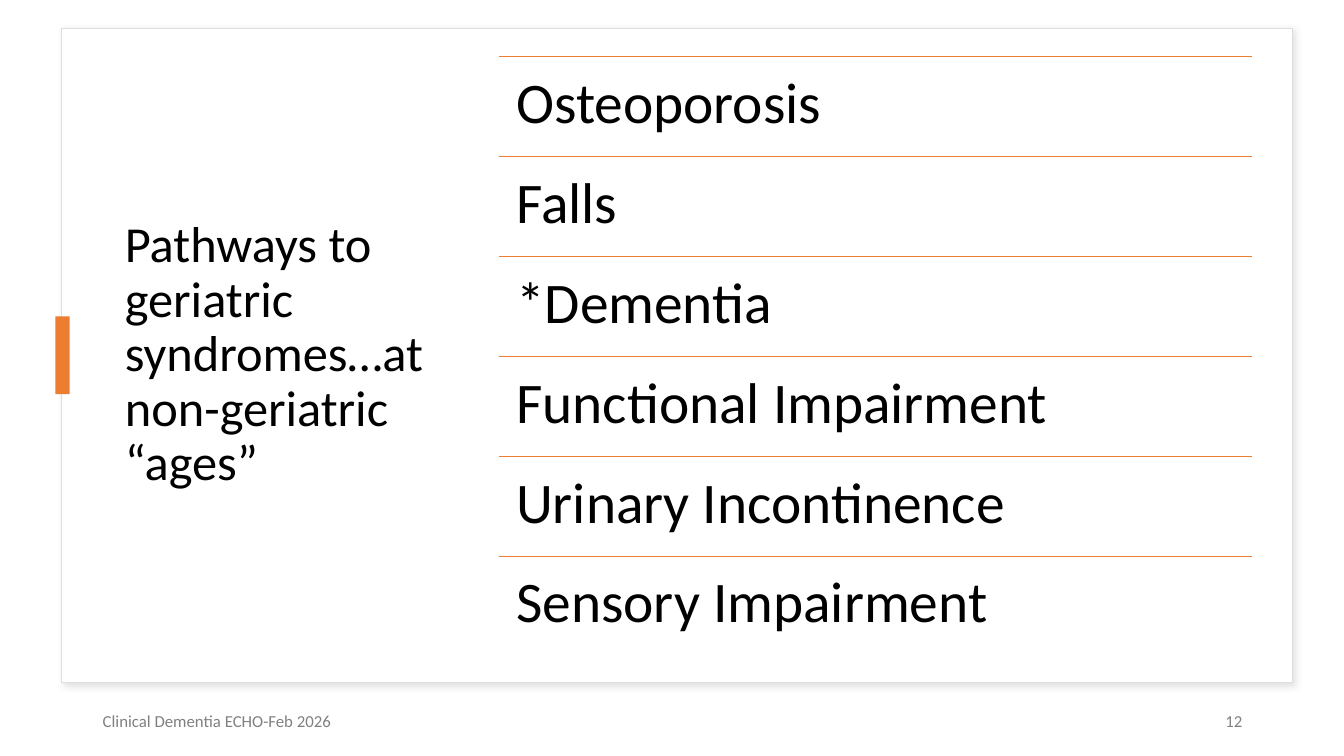
"""Build the slide on pathways to geriatric syndromes."""
from lxml import etree
from pptx import Presentation
from pptx.dml.color import RGBColor
from pptx.enum.shapes import MSO_CONNECTOR, MSO_SHAPE
from pptx.enum.text import MSO_ANCHOR, PP_ALIGN
from pptx.oxml.ns import qn
from pptx.util import Inches, Pt

WHITE = RGBColor(0xFF, 0xFF, 0xFF)
BLACK = RGBColor(0x00, 0x00, 0x00)
GRAY = RGBColor(0x80, 0x80, 0x80)
BORDER = RGBColor(0xDE, 0xDE, 0xDE)
SHADOW = RGBColor(0xC5, 0xC3, 0xC3)
ORANGE = RGBColor(0xED, 0x7D, 0x31)

SYNDROMES = [
    "Osteoporosis",
    "Falls",
    "*Dementia",
    "Functional Impairment",
    "Urinary Incontinence",
    "Sensory Impairment",
]
LIST_LEFT, LIST_TOP, LIST_WIDTH = 4.95, 0.56, 7.47
LIST_HEIGHT = 5.95
ROW_HEIGHT = LIST_HEIGHT / len(SYNDROMES)

presentation = Presentation()
presentation.slide_width = Inches(13.33)
presentation.slide_height = Inches(7.5)
slide = presentation.slides.add_slide(presentation.slide_layouts[6])


def add_rectangle(left, top, width, height, color):
    shape = slide.shapes.add_shape(
        MSO_SHAPE.RECTANGLE, Inches(left), Inches(top), Inches(width), Inches(height)
    )
    shape.shadow.inherit = False
    shape.fill.solid()
    shape.fill.fore_color.rgb = color
    shape.line.fill.background()
    return shape


def add_text(text, left, top, width, height, size, color, anchor=MSO_ANCHOR.MIDDLE):
    box = slide.shapes.add_textbox(Inches(left), Inches(top), Inches(width), Inches(height))
    frame = box.text_frame
    frame.word_wrap = True
    frame.vertical_anchor = anchor
    paragraph = frame.paragraphs[0]
    run = paragraph.add_run()
    run.text = text
    run.font.name = "Calibri"
    run.font.size = Pt(size)
    run.font.color.rgb = color
    return frame


card = add_rectangle(0.61, 0.28, 12.21, 6.49, WHITE)
card.line.color.rgb = BORDER
card.line.width = Pt(1)
effects = card._element.spPr.find(qn("a:effectLst"))
outer_shadow = etree.SubElement(
    effects, qn("a:outerShdw"), blurRad=str(Pt(4)), dist=str(Pt(3)), dir="2700000", algn="tl"
)
shadow_color = etree.SubElement(outer_shadow, qn("a:srgbClr"), val=str(SHADOW))
etree.SubElement(shadow_color, qn("a:alpha"), val="50000")

title = add_text(
    "Pathways to geriatric syndromes…at non-geriatric “ages”", 1.14, 0.55, 3.27, 5.95, 36, BLACK
)
title.paragraphs[0].line_spacing = 0.9

add_rectangle(0.55, 3.14, 0.14, 0.77, ORANGE)

add_text("Clinical Dementia ECHO-Feb 2026", 0.92, 6.95, 3, 0.4, 12, GRAY)
slide_number = add_text("12", 9.42, 6.95, 3, 0.4, 12, GRAY)
slide_number.paragraphs[0].alignment = PP_ALIGN.RIGHT

for index, syndrome in enumerate(SYNDROMES):
    top = LIST_TOP + index * ROW_HEIGHT
    divider = slide.shapes.add_connector(
        MSO_CONNECTOR.STRAIGHT,
        Inches(LIST_LEFT), Inches(top), Inches(LIST_LEFT + LIST_WIDTH), Inches(top),
    )
    divider.line.color.rgb = ORANGE
    divider.line.width = Pt(1)
    etree.SubElement(divider._element.spPr, qn("a:effectLst"))

    row = add_text(
        syndrome, LIST_LEFT, top, LIST_WIDTH, ROW_HEIGHT, 41, BLACK, MSO_ANCHOR.TOP
    )
    row.margin_left = row.margin_right = Inches(0.17)
    row.margin_top = row.margin_bottom = Inches(0.17)
    row.paragraphs[0].line_spacing = 0.9

presentation.save("out.pptx")
